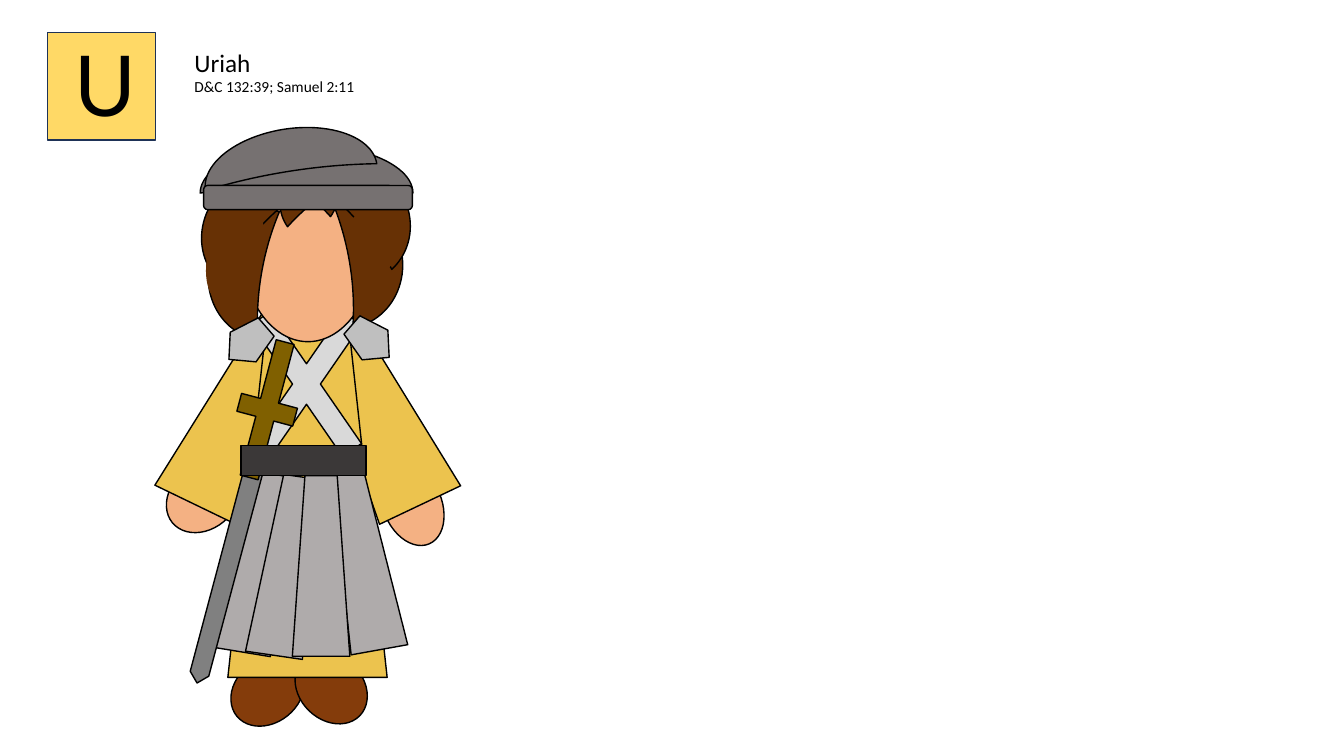
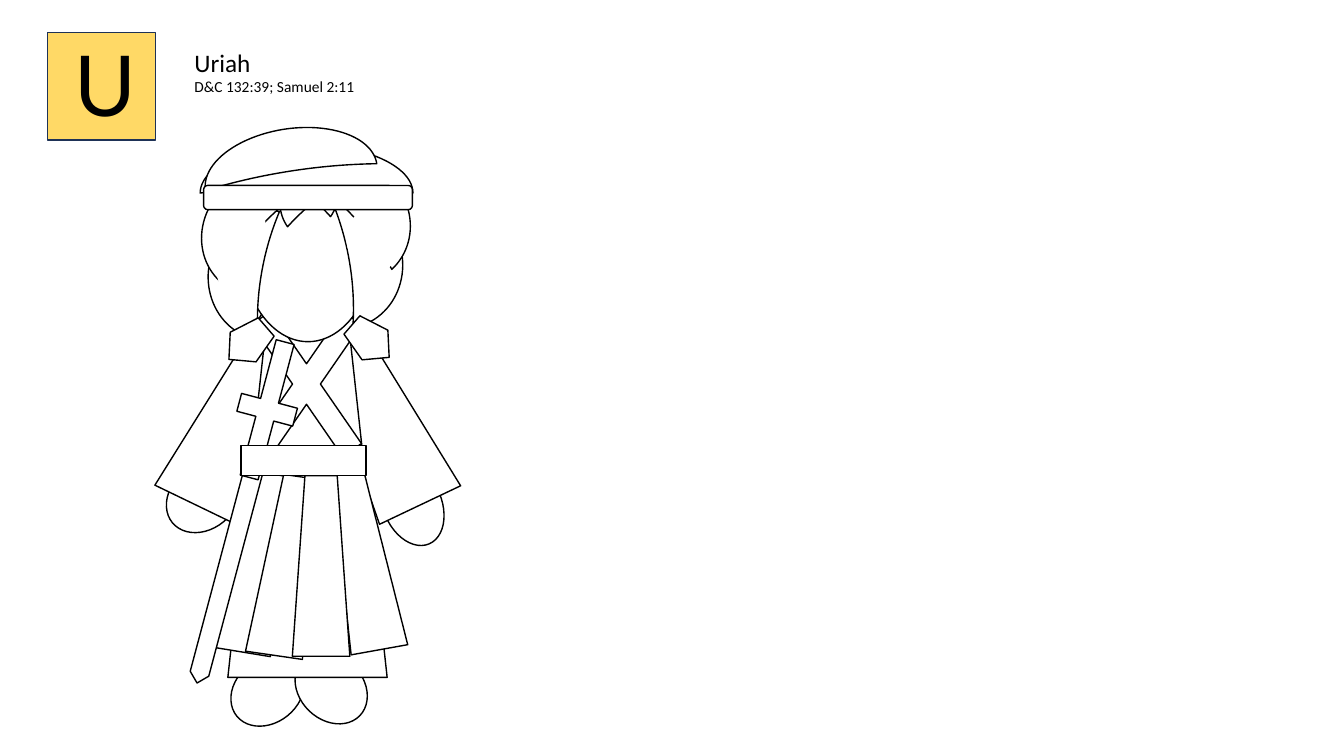
from dataclasses import dataclass
from typing import Optional

from pptx import Presentation
from pptx.dml.color import RGBColor
from pptx.enum.shapes import MSO_SHAPE
from pptx.enum.text import MSO_AUTO_SIZE
from pptx.util import Inches, Pt

BLACK = "000000"
WHITE = "FFFFFF"
BADGE_FILL = "FFD966"
BADGE_LINE = "1E3256"
SKIN = "F4B183"
BOOT = "843C0B"
ROBE = "ECC34E"
STRAP = "D9D9D9"
HAIR = "673105"
TURBAN = "767171"
ARMOUR = "BFBFBF"
SKIRT = "AFABAB"
BLADE = "808080"
HILT = "806000"
BELT = "3B3838"

ELLIPSE = MSO_SHAPE.OVAL
MOON = MSO_SHAPE.MOON
TRAPEZOID = MSO_SHAPE.TRAPEZOID
PENTAGON = MSO_SHAPE.REGULAR_PENTAGON
MOON_DEPTH = 0.875
PLEAT_SLANT = 0.219

Frame = tuple[float, float, float, float]


@dataclass(frozen=True)
class Part:
    kind: MSO_SHAPE
    frame: Frame
    fill: str
    rotation: float = 0
    flipped: bool = False
    adjustment: Optional[float] = None
    line: Optional[str] = BLACK
    outline_frame: Optional[Frame] = None


def pleat(left: float, top: float, rotation: float = 0) -> Part:
    return Part(TRAPEZOID, (left, top, 0.57, 1.79), SKIRT, rotation, adjustment=PLEAT_SLANT)


def moon(frame: Frame, fill: str, rotation: float, flipped: bool = True) -> Part:
    return Part(MOON, frame, fill, rotation, flipped, MOON_DEPTH)


def hair_patch(frame: Frame, rotation: float, outline_frame: Optional[Frame] = None) -> Part:
    return Part(ELLIPSE, frame, HAIR, rotation, line=None, outline_frame=outline_frame)


BADGE = Part(MSO_SHAPE.RECTANGLE, (0.47, 0.32, 1.07, 1.07), BADGE_FILL, line=BADGE_LINE)

LIMBS = [
    Part(ELLIPSE, (3.8, 4.58, 0.58, 0.85), SKIN, 337),
    Part(ELLIPSE, (1.7, 4.54, 0.63, 0.79), SKIN, 50.6),
    Part(ELLIPSE, (2.34, 6.46, 0.63, 0.79), BOOT, 50.6),
    Part(ELLIPSE, (2.97, 6.43, 0.63, 0.79), BOOT, 314.1),
]
CLOTHES = [
    Part(TRAPEZOID, (1.94, 3.05, 0.89, 2.06), ROBE, 25.8),
    Part(TRAPEZOID, (3.28, 3.05, 0.89, 2.06), ROBE, 334.6),
    Part(TRAPEZOID, (2.26, 3.1, 1.58, 3.62), ROBE),
    Part(MSO_SHAPE.MATH_MULTIPLY, (2.17, 2.55, 1.74, 2.52), STRAP, adjustment=0.131),
    pleat(2.26, 4.69, 9.3),
]
HEAD = [
    Part(ELLIPSE, (2.39, 1.45, 1.33, 1.94), SKIN),
    moon((2.07, 2.04, 0.6, 1.29), HAIR, 9.5, flipped=False),
    moon((2.45, 1.03, 0.65, 1.2), HAIR, 263.5),
    moon((2.1, 1.47, 0.6, 1.29), HAIR, 42.7, flipped=False),
    moon((3.39, 1.92, 0.6, 1.29), HAIR, 350.5),
    moon((3.37, 1.35, 0.6, 1.29), HAIR, 317.3),
    moon((2.76, 1.15, 0.46, 1.03), HAIR, 305.2),
    moon((2.91, 1.25, 0.46, 1.03), HAIR, 234.8),
    hair_patch((2.69, 1.11, 0.57, 1.29), 270),
    hair_patch((2.96, 0.99, 0.41, 1.29), 286.6),
    hair_patch((2.07, 1.98, 0.52, 1.04), 195.7, outline_frame=(2.17, 1.99, 0.44, 0.93)),
    hair_patch((3.44, 2.08, 0.52, 0.62), 161.7),
    moon((2.8, 0.62, 0.48, 2.11), TURBAN, 270),
    moon((2.61, 0.66, 0.48, 1.72), TURBAN, 261.1),
    Part(MSO_SHAPE.ROUNDED_RECTANGLE, (2.02, 1.84, 2.07, 0.24), TURBAN),
]
ARMOUR_PARTS = [
    Part(PENTAGON, (3.48, 3.14, 0.39, 0.49), ARMOUR, 131),
    Part(PENTAGON, (2.26, 3.16, 0.39, 0.49), ARMOUR, 229, flipped=True),
    pleat(3.32, 4.67, 349.8),
    pleat(2.56, 4.72, 8.2),
    pleat(2.9, 4.72),
    Part(MSO_SHAPE.PENTAGON, (1.1, 5.57, 2.3, 0.19), BLADE, 104.9),
    Part(MSO_SHAPE.MATH_PLUS, (2.26, 3.12, 0.78, 1.89), HILT, 14.9),
    Part(MSO_SHAPE.RECTANGLE, (2.39, 4.42, 1.24, 0.3), BELT),
]
FIGURE = LIMBS + CLOTHES + HEAD + ARMOUR_PARTS


def colour(value: str) -> RGBColor:
    return RGBColor.from_string(value)


def lengths(frame: Frame) -> list[Inches]:
    return [Inches(value) for value in frame]


def draw_part(shapes, part: Part, outline: bool = False) -> None:
    frame = part.outline_frame if outline and part.outline_frame else part.frame
    shape = shapes.add_shape(part.kind, *lengths(frame))
    shape.shadow.inherit = False
    shape.rotation = part.rotation
    if part.flipped:
        shape._element.spPr.xfrm.set("flipH", "1")
    if part.adjustment is not None:
        shape.adjustments[0] = part.adjustment
    shape.fill.solid()
    shape.fill.fore_color.rgb = colour(WHITE if outline else part.fill)
    if part.line is None:
        shape.line.fill.background()
    else:
        shape.line.color.rgb = colour(part.line)
        shape.line.width = Pt(1)


def add_text(shapes, frame: Frame, lines: list[str], *, sizes: list[float], font: str) -> None:
    text_frame = shapes.add_textbox(*lengths(frame)).text_frame
    text_frame.word_wrap = True
    text_frame.auto_size = MSO_AUTO_SIZE.SHAPE_TO_FIT_TEXT
    for index, (line, size) in enumerate(zip(lines, sizes)):
        paragraph = text_frame.add_paragraph() if index else text_frame.paragraphs[0]
        run = paragraph.add_run()
        run.text = line
        run.font.name = font
        run.font.size = Pt(size)
        run.font.color.rgb = colour(BLACK)


def add_character_slide(presentation, outline: bool) -> None:
    slide = presentation.slides.add_slide(presentation.slide_layouts[6])
    badge = slide.shapes.add_group_shape()
    draw_part(badge.shapes, BADGE)
    add_text(badge.shapes, (0.64, 0.27, 0.81, 1.11), ["U"], sizes=[60], font="Lato")
    add_text(
        slide.shapes,
        (1.83, 0.42, 3.16, 0.59),
        ["Uriah", "D&C 132:39; Samuel 2:11"],
        sizes=[18, 11],
        font="Calibri",
    )
    figure = slide.shapes.add_group_shape()
    for part in FIGURE:
        draw_part(figure.shapes, part, outline)


def main() -> None:
    presentation = Presentation()
    presentation.slide_width = Inches(13.33)
    presentation.slide_height = Inches(7.5)
    for outline in (False, True):
        add_character_slide(presentation, outline)
    presentation.save("out.pptx")


if __name__ == "__main__":
    main()
